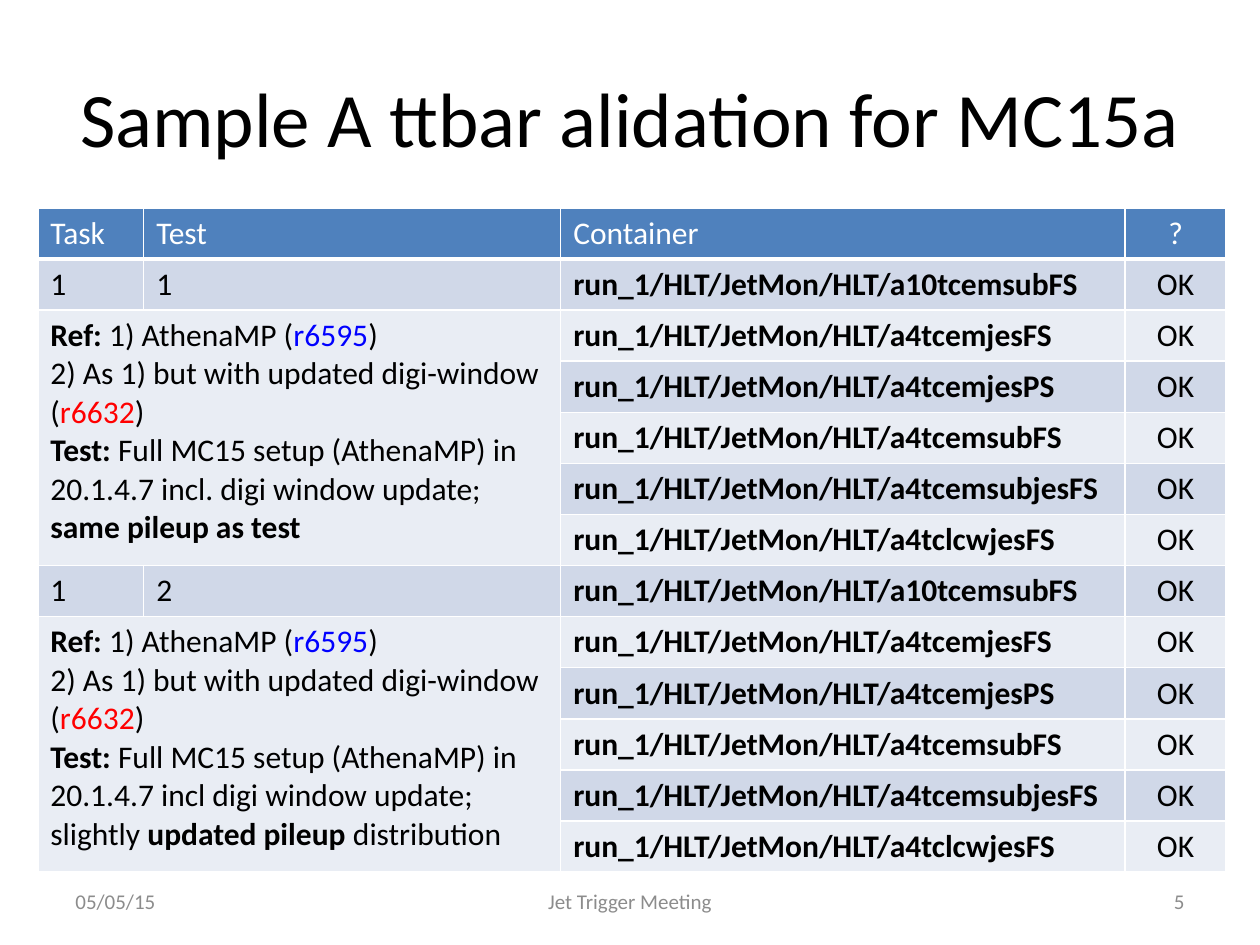
from lxml import etree
from pptx import Presentation
from pptx.dml.color import RGBColor
from pptx.enum.text import MSO_ANCHOR, PP_ALIGN
from pptx.oxml.ns import qn
from pptx.util import Pt

LEFT, MID, RIGHT = PP_ALIGN.LEFT, PP_ALIGN.CENTER, PP_ALIGN.RIGHT
CENTRE = MSO_ANCHOR.MIDDLE

BLACK, WHITE, GREY = "000000", "FFFFFF", "8C8C8C"
BLUE, RED = "0000FF", "FF0000"
HEAD, BANDS = "4F81BD", ("E9EDF4", "D0D8E8")

COLS = (60.5, 238.3, 322.6, 57.6)
ROW = 29.2
SIDES = ("lnL", "lnR", "lnT", "lnB")

TITLES = ("Task", "Test", "Container", "?")
NAMES = ("a10tcemsubFS", "a4tcemjesFS", "a4tcemjesPS",
         "a4tcemsubFS", "a4tcemsubjesFS", "a4tclcwjesFS")
BOLD = {"bold": True}
REF = [
    [("Ref: ", BOLD), ("1) AthenaMP (", {}), ("r6595", {"color": BLUE}), (")", {})],
    [("2) As 1) but with updated digi-window (", {}), ("r6632", {"color": RED}), (")", {})],
]
TESTS = (
    [("Test: ", BOLD),
     ("Full MC15 setup (AthenaMP) in 20.1.4.7 incl. digi window update; ", {}),
     ("same pileup as test", BOLD)],
    [("Test: ", BOLD),
     ("Full MC15 setup (AthenaMP) in 20.1.4.7 incl digi window update; slightly ", {}),
     ("updated pileup ", BOLD), ("distribution", {})],
)


def paint(code):
    return RGBColor.from_string(code)


def write(para, text, size=18, color=BLACK, bold=False, font="Calibri", align=LEFT):
    para.alignment = align
    run = para.add_run()
    run.text = text
    run.font.name = font
    run.font.size = Pt(size)
    run.font.bold = bold
    run.font.color.rgb = paint(color)


class Deck:
    def __init__(self):
        self.show = Presentation()
        self.show.slide_width, self.show.slide_height = Pt(720), Pt(540)
        self.slide = self.show.slides.add_slide(self.show.slide_layouts[6])

    def label(self, box, text, **style):
        frame = self.slide.shapes.add_textbox(*map(Pt, box)).text_frame
        frame.word_wrap = True
        frame.vertical_anchor = CENTRE
        write(frame.paragraphs[0], text, **style)

    def grid(self, left, top, rows):
        size = (sum(COLS), ROW * rows)
        table = self.slide.shapes.add_table(
            rows, len(COLS), *map(Pt, (left, top, *size))).table
        for col, width in zip(table.columns, COLS):
            col.width = Pt(width)
        for num, row in enumerate(table.rows):
            row.height = Pt(ROW)
            for cell in row.cells:
                self.edge(cell, num == 0)
                cell.fill.solid()
                cell.fill.fore_color.rgb = paint(BANDS[num % 2] if num else HEAD)
        return table

    def edge(self, cell, head):
        props = cell._tc.get_or_add_tcPr()
        for side in SIDES:
            width = 3 if head and side == "lnB" else 1
            line = etree.SubElement(props, qn("a:" + side), w=str(Pt(width)))
            fill = etree.SubElement(line, qn("a:solidFill"))
            etree.SubElement(fill, qn("a:srgbClr"), val=WHITE)

    def cell(self, cell, text, **style):
        write(cell.text_frame.paragraphs[0], text, **style)

    def note(self, cell, lines):
        frame = cell.text_frame
        for num, line in enumerate(lines):
            para = frame.add_paragraph() if num else frame.paragraphs[0]
            for text, style in line:
                write(para, text, **style)


def main():
    deck = Deck()
    deck.label((36, 21.6, 648, 90), "Sample A ttbar alidation for MC15a",
               size=44, align=MID)

    step = len(NAMES)
    table = deck.grid(21.6, 118.8, 1 + step * len(TESTS))
    for col, text in enumerate(TITLES):
        deck.cell(table.cell(0, col), text, color=WHITE,
                  align=MID if col == 3 else LEFT)
    for part, test in enumerate(TESTS):
        top = 1 + part * step
        deck.cell(table.cell(top, 0), "1")
        deck.cell(table.cell(top, 1), str(part + 1))
        table.cell(top + 1, 0).merge(table.cell(top + step - 1, 1))
        deck.note(table.cell(top + 1, 0), REF + [test])
        for row, name in enumerate(NAMES, top):
            deck.cell(table.cell(row, 2), "run_1/HLT/JetMon/HLT/" + name, bold=True)
            deck.cell(table.cell(row, 3), "OK", align=MID)

    for left, width, text, align in (
            (36, 168, "05/05/15", LEFT),
            (246, 228, "Jet Trigger Meeting", MID),
            (516, 168, "5", RIGHT)):
        deck.label((left, 500.5, width, 28.8), text, size=12, color=GREY, align=align)
    deck.show.save("out.pptx")


if __name__ == "__main__":
    main()
